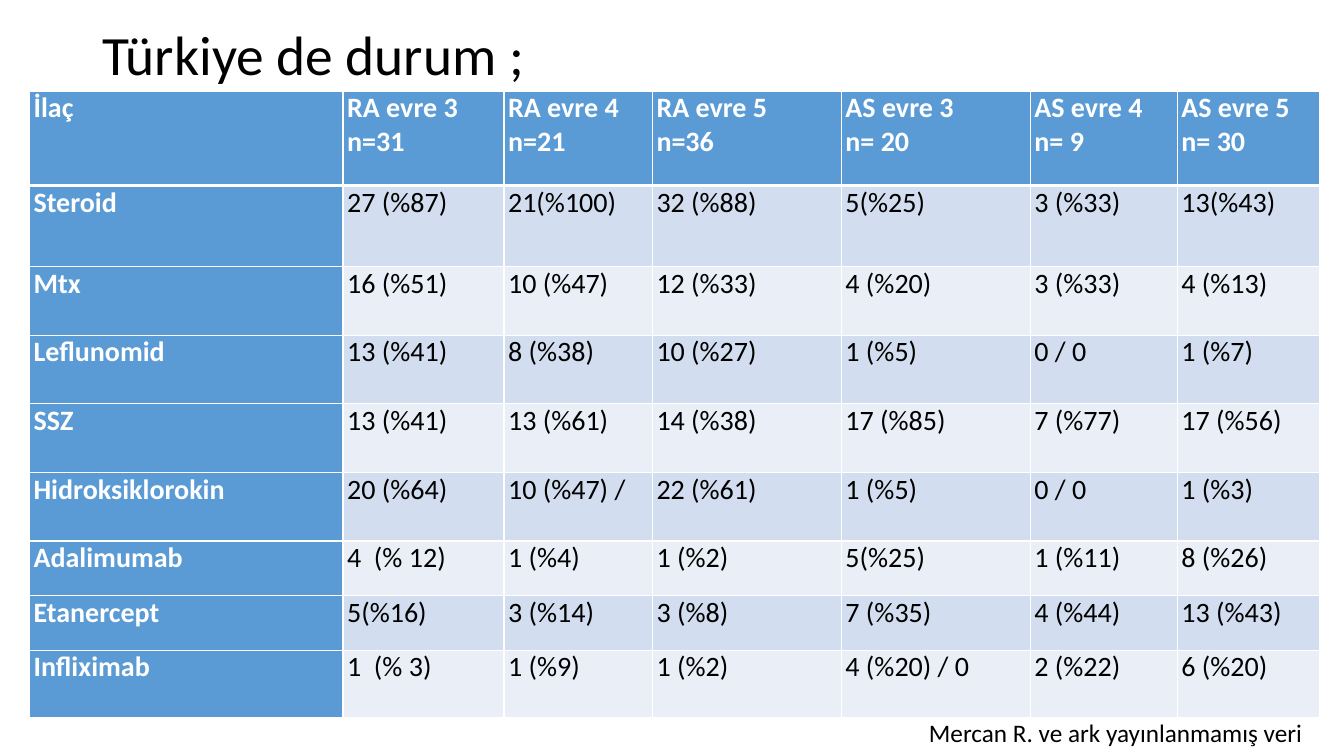
import pptx
import pptx.util
import pptx.dml.color
import pptx.enum.text
import pptx.oxml.ns
import lxml.etree

Pt = pptx.util.Pt


def color(value):
    return pptx.dml.color.RGBColor.from_string(value)


def add_border(cell, side, width):
    name = pptx.oxml.ns.qn
    properties = cell._tc.get_or_add_tcPr()
    line = lxml.etree.SubElement(properties, name(f"a:ln{side}"), w=str(Pt(width)))
    fill = lxml.etree.SubElement(line, name("a:solidFill"))
    lxml.etree.SubElement(fill, name("a:srgbClr"), val="FFFFFF")


presentation = pptx.Presentation()
presentation.slide_width = Pt(960)
presentation.slide_height = Pt(540)
slide = presentation.slides.add_slide(presentation.slide_layouts[6])

captions = [
    ("Türkiye de durum ;", 66, 28.8, 828, 25.2, 39.6, 0.9, True, pptx.enum.text.MSO_ANCHOR.MIDDLE),
    ("Mercan R. ve ark yayınlanmamış veri", 656.5, 509, 288, 29, 18, 1, False, pptx.enum.text.MSO_ANCHOR.TOP),
]
for text, left, top, width, height, size, spacing, wrap, anchor in captions:
    shape = slide.shapes.add_textbox(Pt(left), Pt(top), Pt(width), Pt(height))
    shape.text_frame.word_wrap = wrap
    shape.text_frame.vertical_anchor = anchor
    paragraph = shape.text_frame.paragraphs[0]
    paragraph.text = text
    paragraph.line_spacing = spacing
    paragraph.font.name = "Calibri"
    paragraph.font.size = Pt(size)
    paragraph.font.color.rgb = color("000000")

rows = [
    ["İlaç", "RA evre 3\nn=31", "RA evre 4\nn=21", "RA evre 5\nn=36", "AS evre 3\nn= 20", "AS evre 4\nn= 9", "AS evre 5\nn= 30"],
    ["Steroid", "27 (%87)", "21(%100)", "32 (%88)", "5(%25)", "3 (%33)", "13(%43)"],
    ["Mtx", "16 (%51)", "10 (%47)", "12 (%33)", "4 (%20)", "3 (%33)", "4 (%13)"],
    ["Leflunomid", "13 (%41)", "8 (%38)", "10 (%27)", "1 (%5)", "0 / 0", "1 (%7)"],
    ["SSZ", "13 (%41)", "13 (%61)", "14 (%38)", "17 (%85)", "7 (%77)", "17 (%56)"],
    ["Hidroksiklorokin", "20 (%64)", "10 (%47) /", "22 (%61)", "1 (%5)", "0 / 0", "1 (%3)"],
    ["Adalimumab", "4  (% 12)", "1 (%4)", "1 (%2)", "5(%25)", "1 (%11)", "8 (%26)"],
    ["Etanercept", "5(%16)", "3 (%14)", "3 (%8)", "7 (%35)", "4 (%44)", "13 (%43)"],
    ["Infliximab", "1  (% 3)", "1 (%9)", "1 (%2)", "4 (%20) / 0", "2 (%22)", "6 (%20)"],
]
column_widths = [224, 115, 106, 135, 135, 105, 102]
row_heights = [67.5, 58, 49, 49, 49, 49, 39, 39, 48]

table = slide.shapes.add_table(
    len(rows), len(column_widths), Pt(21), Pt(65), Pt(sum(column_widths)), Pt(sum(row_heights))
).table
for column, width in zip(table.columns, column_widths):
    column.width = Pt(width)
for row, height in zip(table.rows, row_heights):
    row.height = Pt(height)

for row_index, texts in enumerate(rows):
    for column_index, text in enumerate(texts):
        cell = table.cell(row_index, column_index)
        heading = row_index == 0 or column_index == 0
        cell.margin_left = cell.margin_right = Pt(3)
        cell.margin_top = cell.margin_bottom = 0
        add_border(cell, "L", 1)
        add_border(cell, "R", 1)
        add_border(cell, "T", 3 if row_index == 1 else 1)
        add_border(cell, "B", 3 if row_index == 0 else 1)
        cell.fill.solid()
        band = "D2DEEF" if row_index % 2 else "EAEFF7"
        cell.fill.fore_color.rgb = color("5B9BD5" if heading else band)
        cell.text = text
        for paragraph in cell.text_frame.paragraphs:
            paragraph.alignment = pptx.enum.text.PP_ALIGN.JUSTIFY
            paragraph.font.name = "Calibri"
            paragraph.font.size = Pt(20)
            paragraph.font.bold = heading
            paragraph.font.color.rgb = color("FFFFFF" if heading else "000000")

presentation.save("out.pptx")
